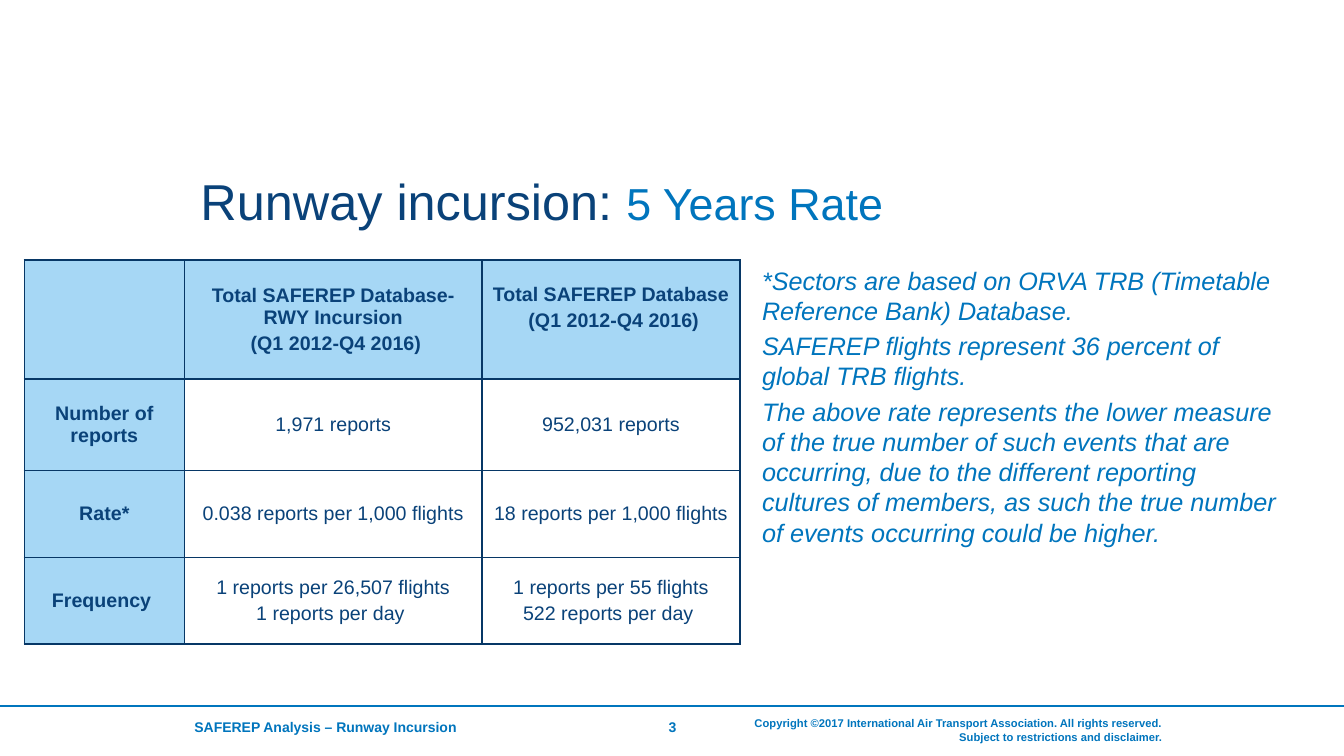
from dataclasses import dataclass

from lxml import etree
from pptx import Presentation
from pptx.dml.color import RGBColor
from pptx.enum.shapes import MSO_CONNECTOR
from pptx.enum.text import MSO_ANCHOR, PP_ALIGN
from pptx.oxml.ns import qn
from pptx.util import Inches, Pt

LEFT, CENTER, RIGHT = PP_ALIGN.LEFT, PP_ALIGN.CENTER, PP_ALIGN.RIGHT
TOP, MIDDLE = MSO_ANCHOR.TOP, MSO_ANCHOR.MIDDLE
STRAIGHT = MSO_CONNECTOR.STRAIGHT


@dataclass(frozen=True)
class Theme:
    font: str = "Arial"
    navy: str = "0A4279"
    blue: str = "0075BD"
    pale: str = "A6D7F5"
    border: str = "073766"
    title: int = 36
    subtitle: int = 32
    notes: int = 18
    cell: int = 14
    footer: int = 10
    legal: int = 8
    gap: float = 0.2  # space before a paragraph, as a share of its type size


THEME = Theme()

SLIDE_WIDTH, SLIDE_HEIGHT = 13.33, 7.5
PERIOD = " (Q1 2012-Q4 2016)"
COLUMNS = [1.59, 2.95, 2.56]
ROWS = [1.18, 0.91, 0.86, 0.86]
# Each cell is a list of paragraphs
RATES = [
    [[], ["Total SAFEREP Database-RWY Incursion", PERIOD],
     ["Total SAFEREP Database", PERIOD]],
    [["Number of reports"], ["1,971 reports"], ["952,031 reports"]],
    [["Rate*"], ["0.038 reports per 1,000 flights"],
     ["18 reports per 1,000 flights"]],
    [["Frequency "], ["1 reports per 26,507 flights", "1 reports per day "],
     ["1 reports per 55 flights", "522 reports per day "]],
]
NOTES = [
    "*Sectors are based on ORVA TRB (Timetable Reference Bank) Database.",
    "SAFEREP flights represent 36 percent of global TRB flights.",
    "The above rate represents the lower measure of the true number of such "
    "events that are occurring, due to the different reporting cultures of "
    "members, as such the true number of events occurring could be higher.",
]
LEGAL = [
    "Copyright ©2017 International Air Transport Association. "
    "All rights reserved. ",
    "Subject to restrictions and disclaimer. ",
]


def add_span(para, text, size, color, bold=False, italic=False):
    span = para.add_run()
    span.text = text
    font = span.font
    font.name, font.size = THEME.font, Pt(size)
    font.bold, font.italic = bold, italic
    font.color.rgb = RGBColor.from_string(color)


def fill_frame(frame, lines, size, color, align=LEFT, gap=0, **style):
    for index, line in enumerate(lines):
        para = frame.add_paragraph() if index else frame.paragraphs[0]
        para.alignment = align
        if index and gap:
            para.space_before = Pt(round(size * gap, 1))
        add_span(para, line, size, color, **style)


def add_box(page, left, top, width, height, anchor=TOP):
    box = page.shapes.add_textbox(
        Inches(left), Inches(top), Inches(width), Inches(height))
    frame = box.text_frame
    frame.word_wrap = True
    frame.vertical_anchor = anchor
    return frame


def add_title(page, left, top, width, height):
    para = add_box(page, left, top, width, height, MIDDLE).paragraphs[0]
    add_span(para, "Runway incursion: ", THEME.title, THEME.navy)
    add_span(para, "5 Years Rate", THEME.subtitle, THEME.blue)


def add_borders(cell):
    properties = cell._tc.get_or_add_tcPr()
    for side in ("a:lnL", "a:lnR", "a:lnT", "a:lnB"):
        line = etree.SubElement(properties, qn(side), w=str(Pt(1)))
        solid = etree.SubElement(line, qn("a:solidFill"))
        etree.SubElement(solid, qn("a:srgbClr"), val=THEME.border)


def add_rates(page, left, top):
    table = page.shapes.add_table(
        len(ROWS), len(COLUMNS), Inches(left), Inches(top),
        Inches(sum(COLUMNS)), Inches(sum(ROWS))).table
    table.first_row = table.horz_banding = False
    for column, width in zip(table.columns, COLUMNS):
        column.width = Inches(width)
    for r, (height, contents) in enumerate(zip(ROWS, RATES)):
        table.rows[r].height = Inches(height)
        for c, lines in enumerate(contents):
            cell = table.cell(r, c)
            heading = r == 0 or c == 0
            cell.vertical_anchor = MIDDLE
            cell.margin_left = cell.margin_right = Inches(0.08)
            cell.margin_top = cell.margin_bottom = Inches(0.04)
            add_borders(cell)
            if heading:
                cell.fill.solid()
                cell.fill.fore_color.rgb = RGBColor.from_string(THEME.pale)
            else:
                cell.fill.background()
            fill_frame(cell.text_frame, lines, THEME.cell, THEME.navy, CENTER,
                       THEME.gap, bold=heading)
    # Lift the shorter heading level with its neighbour
    table.cell(0, 2).margin_bottom = Inches(0.28)


def add_notes(page, left, top, width, height):
    frame = add_box(page, left, top, width, height)
    fill_frame(frame, NOTES, THEME.notes, THEME.blue, gap=THEME.gap,
               italic=True)


def add_footer(page, top):
    # Rule across the page
    rule = page.shapes.add_connector(
        STRAIGHT, 0, Inches(top), Inches(SLIDE_WIDTH), Inches(top))
    rule.line.color.rgb = RGBColor.from_string(THEME.blue)
    rule.line.width = Pt(1.5)
    etree.SubElement(rule._element.spPr, qn("a:effectLst"))

    # Report name, page number and copyright
    parts = [
        (1.83, 0.08, 3.42, 0.25, ["SAFEREP Analysis – Runway Incursion"],
         THEME.footer, LEFT),
        (5.78, 0.08, 1.78, 0.25, ["3"], THEME.footer, CENTER),
        (7.33, 0.06, 4.33, 0.37, LEGAL, THEME.legal, RIGHT),
    ]
    for left, drop, width, height, lines, size, align in parts:
        frame = add_box(page, left, top + drop, width, height)
        fill_frame(frame, lines, size, THEME.blue, align, bold=True)


def main():
    deck = Presentation()
    deck.slide_width = Inches(SLIDE_WIDTH)
    deck.slide_height = Inches(SLIDE_HEIGHT)
    page = deck.slides.add_slide(deck.slide_layouts[6])
    add_title(page, 1.89, 1.63, 8.8, 0.71)
    add_rates(page, 0.24, 2.58)
    add_notes(page, 7.46, 2.58, 5.4, 3.68)
    add_footer(page, 7)
    deck.save("out.pptx")


if __name__ == "__main__":
    main()
